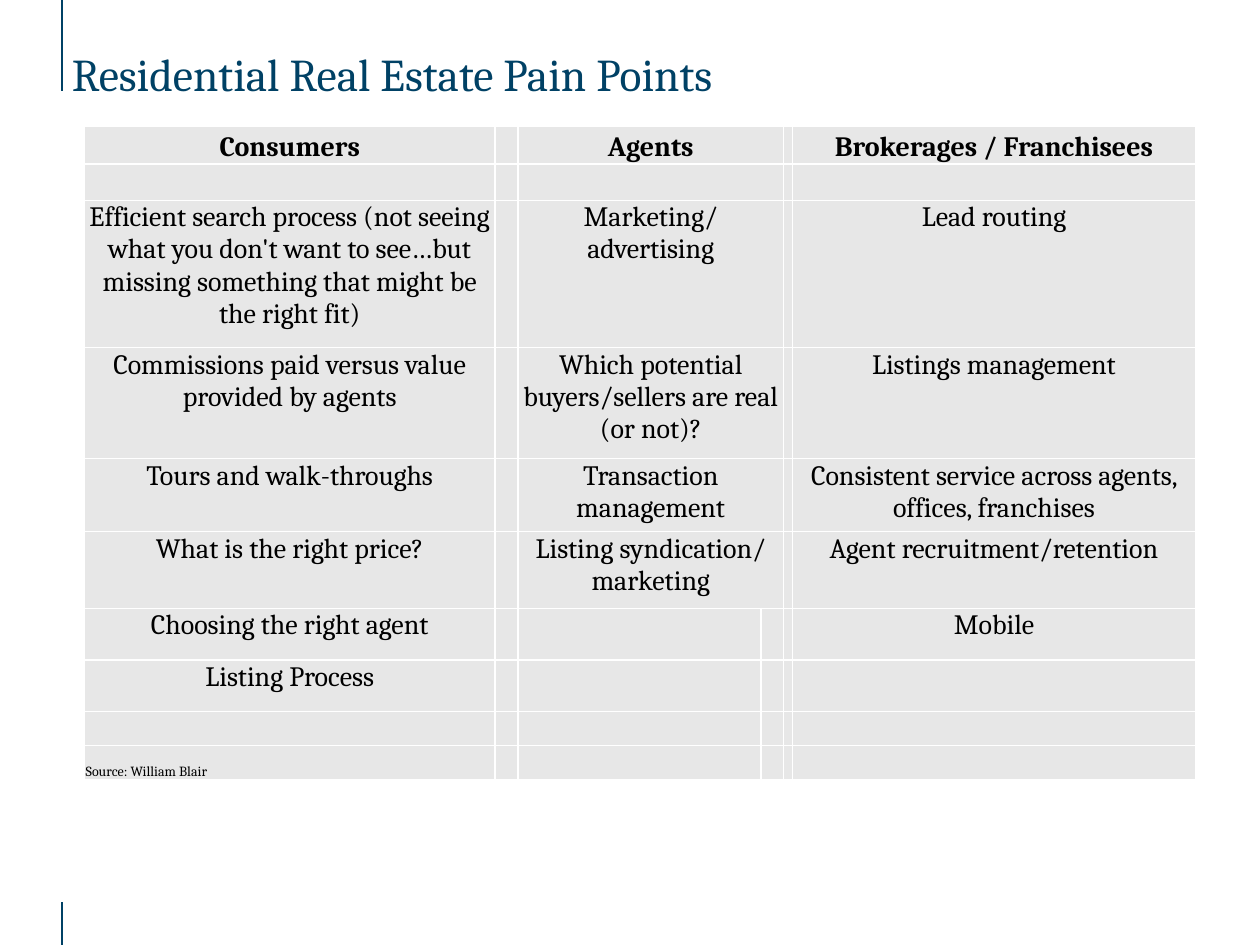
"""Build the slide of residential real estate pain points."""
from dataclasses import dataclass

from lxml import etree
from pptx import Presentation
from pptx import util as u
from pptx.dml.color import RGBColor
from pptx.enum import shapes, text
from pptx.oxml import ns

TITLE = "Residential Real Estate Pain Points"
HEADINGS = ("Consumers", "Agents", "Brokerages / Franchisees")
PAIN_POINTS = [
    ("Efficient search process (not seeing what you don't want to see…but "
     "missing something that might be the right fit)",
     "Marketing/ advertising", "Lead routing"),
    ("Commissions paid versus value provided by agents",
     "Which potential buyers/sellers are real (or not)?", "Listings management"),
    ("Tours and walk-throughs", "Transaction management",
     "Consistent service across agents, offices, franchises"),
    ("What is the right price?", "Listing syndication/ marketing",
     "Agent recruitment/retention"),
    ("Choosing the right agent", "", "Mobile"),
    ("Listing Process", "", ""),
]
SOURCE = "Source: William Blair"
BLANK_ROW = ("", "", "")
ROWS = [HEADINGS, BLANK_ROW, *PAIN_POINTS, BLANK_ROW, (SOURCE, "", "")]
TEXT_COLUMNS = (0, 2, 5)
MERGED_ROWS = 6

SLIDE_SIZE = (10, 7.5)
COLUMN_WIDTHS = (3.26, 0.18, 1.93, 0.18, 0.07, 3.2)
ROW_HEIGHTS = (0.3, 0.29, 1.17, 0.88, 0.58, 0.61, 0.41, 0.41, 0.27, 0.27)
TABLE_LEFT, TABLE_TOP = 0.67, 1
TITLE_BOX = (0.57, 0.11, 8.93, 0.69)
RULE_LEFT = 0.49
RULE_SPANS = ((0, 0.72), (7.16, 7.5))


@dataclass(frozen=True)
class Theme:
    """Hold the colours and type sizes."""
    font: str = "Cambria"
    accent: str = "004165"
    ink: str = "000000"
    cell: str = "E7E7E7"
    border: str = "FFFFFF"
    title_size: int = 26
    body_size: int = 16
    source_size: int = 8
    line_width: int = 1


THEME = Theme()


def style_runs(paragraph, size, color, bold=False):
    """Set the type of every run."""
    for run in paragraph.runs:
        font = run.font
        font.name, font.size, font.bold = THEME.font, u.Pt(size), bold
        font.color.rgb = RGBColor.from_string(color)


def add_rule(slide, top, bottom):
    """Draw one vertical rule at the left edge."""
    rule = slide.shapes.add_connector(
        shapes.MSO_CONNECTOR.STRAIGHT, u.Inches(RULE_LEFT), u.Inches(top),
        u.Inches(RULE_LEFT), u.Inches(bottom))
    rule.line.color.rgb = RGBColor.from_string(THEME.accent)
    rule.line.width = u.Pt(THEME.line_width)
    etree.SubElement(rule.line._get_or_add_ln().getparent(), ns.qn("a:effectLst"))


def add_title(slide):
    """Write the title above the table."""
    frame = slide.shapes.add_textbox(*map(u.Inches, TITLE_BOX)).text_frame
    frame.word_wrap = True
    frame.vertical_anchor = text.MSO_ANCHOR.BOTTOM
    frame.margin_left = frame.margin_right = frame.margin_top = frame.margin_bottom = 0
    frame.text = TITLE
    paragraph = frame.paragraphs[0]
    paragraph.line_spacing = u.Pt(24)
    style_runs(paragraph, THEME.title_size, THEME.accent)


def style_cell(cell):
    """Give a cell its borders, fill and margins."""
    properties = cell._tc.get_or_add_tcPr()
    for side in ("lnL", "lnR", "lnT", "lnB"):
        line = etree.SubElement(properties, ns.qn(f"a:{side}"),
                                w=str(u.Pt(THEME.line_width)))
        fill = etree.SubElement(line, ns.qn("a:solidFill"))
        etree.SubElement(fill, ns.qn("a:srgbClr"), val=THEME.border)
    cell.fill.solid()
    cell.fill.fore_color.rgb = RGBColor.from_string(THEME.cell)
    cell.margin_left = cell.margin_right = cell.margin_top = u.Inches(0.01)
    cell.margin_bottom = 0


def write_cell(cell, words, is_heading):
    """Write the words of a cell, or keep an empty cell small."""
    paragraph = cell.text_frame.paragraphs[0]
    if not words:
        etree.SubElement(paragraph._p, ns.qn("a:endParaRPr"),
                         sz=str(THEME.source_size * 100))
        return
    is_source = words == SOURCE
    paragraph.text = words
    paragraph.alignment = text.PP_ALIGN.LEFT if is_source else text.PP_ALIGN.CENTER
    at_bottom = is_heading or is_source
    cell.vertical_anchor = text.MSO_ANCHOR.BOTTOM if at_bottom else text.MSO_ANCHOR.TOP
    style_runs(paragraph, THEME.source_size if is_source else THEME.body_size,
               THEME.ink, is_heading)


def add_pain_table(slide):
    """Build the table of pain points."""
    table = slide.shapes.add_table(
        len(ROWS), len(COLUMN_WIDTHS), u.Inches(TABLE_LEFT), u.Inches(TABLE_TOP),
        u.Inches(sum(COLUMN_WIDTHS)), u.Inches(sum(ROW_HEIGHTS))).table
    table.first_row = table.horz_banding = False
    for column, width in zip(table.columns, COLUMN_WIDTHS):
        column.width = u.Inches(width)
    for row_index, (words, height) in enumerate(zip(ROWS, ROW_HEIGHTS)):
        table.rows[row_index].height = u.Inches(height)
        row_text = dict(zip(TEXT_COLUMNS, words))
        for column_index in range(len(COLUMN_WIDTHS)):
            cell = table.cell(row_index, column_index)
            style_cell(cell)
            write_cell(cell, row_text.get(column_index, ""), row_index == 0)
        if row_index < MERGED_ROWS:
            table.cell(row_index, 2).merge(table.cell(row_index, 3))


def main():
    """Assemble and save the presentation."""
    presentation = Presentation()
    presentation.slide_width, presentation.slide_height = map(u.Inches, SLIDE_SIZE)
    slide = presentation.slides.add_slide(presentation.slide_layouts[6])
    for top, bottom in RULE_SPANS:
        add_rule(slide, top, bottom)
    add_title(slide)
    add_pain_table(slide)
    presentation.save("out.pptx")


if __name__ == "__main__":
    main()
